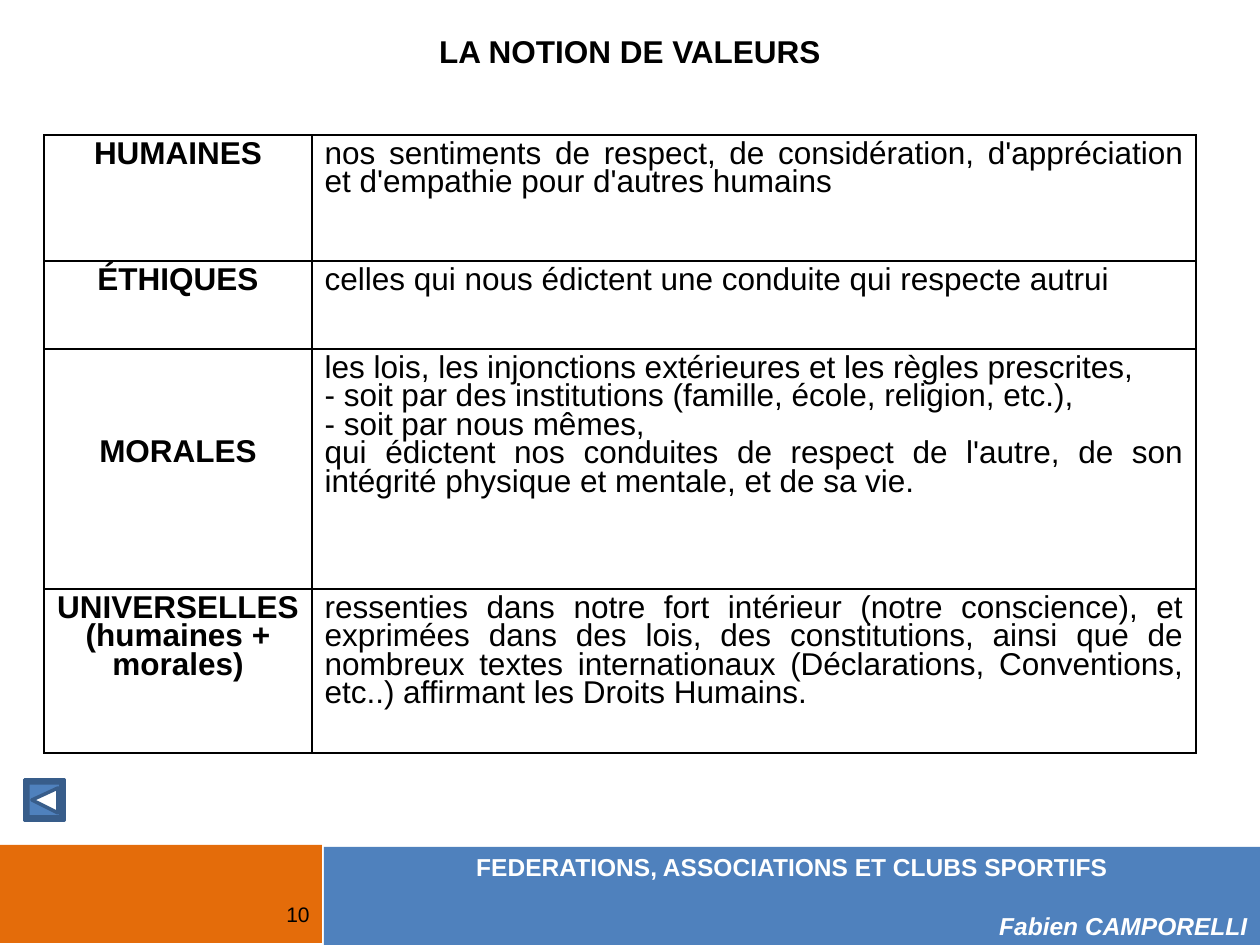
from dataclasses import dataclass

from lxml import etree
from pptx import Presentation
from pptx.dml.color import RGBColor
from pptx.enum.shapes import MSO_SHAPE
from pptx.enum.text import MSO_ANCHOR, MSO_AUTO_SIZE, PP_ALIGN
from pptx.oxml.ns import qn
from pptx.util import Pt

PX = 914400 / 126
RECT = MSO_SHAPE.RECTANGLE
TOP, MIDDLE = MSO_ANCHOR.TOP, MSO_ANCHOR.MIDDLE
NO_FIT = MSO_AUTO_SIZE.NONE
CENTER, RIGHT, JUSTIFY = PP_ALIGN.CENTER, PP_ALIGN.RIGHT, PP_ALIGN.JUSTIFY
TITLE_ONLY = 5


@dataclass(frozen=True)
class Theme:
    font: str = "Arial"
    ink: str = "000000"
    paper: str = "FFFFFF"
    orange: str = "E46C0A"
    blue: str = "4F81BD"
    dark_blue: str = "385D8A"
    body: int = 18
    footer: int = 14
    number: int = 12
    border: int = 1
    outline: int = 2


THEME = Theme()

COLUMNS = [268, 884]
ROWS = [
    (126, "HUMAINES", [
        "nos sentiments de respect, de considération, d'appréciation et d'empathie "
        "pour d'autres humains"]),
    (88, "ÉTHIQUES", ["celles qui nous édictent une conduite qui respecte autrui"]),
    (240, "MORALES", [
        "les lois, les injonctions extérieures et les règles prescrites,",
        "- soit par des institutions (famille, école, religion, etc.),",
        "- soit par nous mêmes,",
        "qui édictent nos conduites de respect de l'autre, de son intégrité physique "
        "et mentale, et de sa vie."]),
    (164, "UNIVERSELLES (humaines + morales)", [
        "ressenties dans notre fort intérieur (notre conscience), et exprimées dans "
        "des lois, des constitutions, ainsi que de nombreux textes internationaux "
        "(Déclarations, Conventions, etc..) affirmant les Droits Humains."]),
]


def px(n):
    return round(n * PX)


def box(*lengths):
    return [px(n) for n in lengths]


def rgb(color):
    return RGBColor.from_string(color)


def style(p, size, color, align, bold=False, italic=False):
    p.alignment = align
    font = p.font
    font.name, font.size = THEME.font, Pt(size)
    font.bold, font.italic = bold, italic
    font.color.rgb = rgb(color)


def set_title(s, text):
    title = s.shapes.title
    title.left, title.top, title.width, title.height = box(0, 26, 1260, 50)
    tf = title.text_frame
    tf.text = text
    tf.auto_size = NO_FIT
    tf.vertical_anchor = TOP
    style(tf.paragraphs[0], THEME.body, THEME.ink, CENTER, bold=True)


def add_block(s, bounds, color):
    sp = s.shapes.add_shape(RECT, *box(*bounds))
    sp.shadow.inherit = False
    sp.fill.solid()
    sp.fill.fore_color.rgb = rgb(color)
    sp.line.fill.background()
    return sp


def add_footer(s):
    add_block(s, (-1, 845, 323, 98), THEME.orange)
    tf = add_block(s, (324, 847, 936, 98), THEME.blue).text_frame
    tf.word_wrap = True
    tf.vertical_anchor = MIDDLE
    tf.text = "FEDERATIONS, ASSOCIATIONS ET CLUBS SPORTIFS\nFabien CAMPORELLI"
    course, author = tf.paragraphs
    style(course, THEME.footer, THEME.paper, CENTER, bold=True)
    style(author, THEME.footer, THEME.paper, RIGHT, bold=True, italic=True)
    author.space_before = Pt(17)


def add_page_number(s, text):
    tf = s.shapes.add_textbox(*box(253, 895, 69, 50)).text_frame
    tf.word_wrap = True
    tf.text = text
    style(tf.paragraphs[0], THEME.number, THEME.ink, RIGHT)


def set_borders(cell):
    tc_pr = cell._tc.get_or_add_tcPr()
    for i, side in enumerate(("a:lnL", "a:lnR", "a:lnT", "a:lnB")):
        ln = etree.Element(qn(side), w=str(Pt(THEME.border)))
        fill = etree.SubElement(ln, qn("a:solidFill"))
        etree.SubElement(fill, qn("a:srgbClr"), val=THEME.ink)
        tc_pr.insert(i, ln)


def fill_cell(cell, lines, align, bold=False):
    cell.fill.solid()
    cell.fill.fore_color.rgb = rgb(THEME.paper)
    set_borders(cell)
    cell.text_frame.text = "\n".join(lines)
    for p in cell.text_frame.paragraphs:
        style(p, THEME.body, THEME.ink, align, bold)
        p.line_spacing = 0.81


def add_values_table(s):
    height = sum(row[0] for row in ROWS)
    frame = s.shapes.add_table(len(ROWS), len(COLUMNS),
                               *box(44, 135, sum(COLUMNS), height))
    table = frame.table
    table.first_row = table.horz_banding = False
    for column, width in zip(table.columns, COLUMNS):
        column.width = px(width)
    for i, (row_height, name, lines) in enumerate(ROWS):
        table.rows[i].height = px(row_height)
        fill_cell(table.cell(i, 0), [name], CENTER, bold=True)
        fill_cell(table.cell(i, 1), lines, JUSTIFY)
    table.cell(2, 0).margin_top = px(91)


def add_back_button(s):
    outer = [(25, 780), (64, 780), (64, 820), (25, 820)]
    inner = [(28, 783), (61, 783), (61, 817), (28, 817)]
    arrow = [(32, 800), (58, 788), (58, 813)]
    bevels = [[outer[i], outer[(i + 1) % 4], inner[(i + 1) % 4], inner[i]]
              for i in range(4)]
    builder = s.shapes.build_freeform(*outer[0], scale=PX)
    builder.add_line_segments(outer[1:], close=True)
    for start, *rest in [*bevels, arrow]:
        builder.move_to(*start)
        builder.add_line_segments(rest, close=True)
    sp = builder.convert_to_shape()
    sp.shadow.inherit = False
    sp.fill.solid()
    sp.fill.fore_color.rgb = rgb(THEME.blue)
    sp.line.color.rgb = rgb(THEME.dark_blue)
    sp.line.width = Pt(THEME.outline)


def main():
    prs = Presentation()
    prs.slide_width, prs.slide_height = box(1260, 945)
    s = prs.slides.add_slide(prs.slide_layouts[TITLE_ONLY])
    set_title(s, "LA NOTION DE VALEURS")
    add_footer(s)
    add_page_number(s, "10")
    add_values_table(s)
    add_back_button(s)
    prs.save("out.pptx")


if __name__ == "__main__":
    main()
